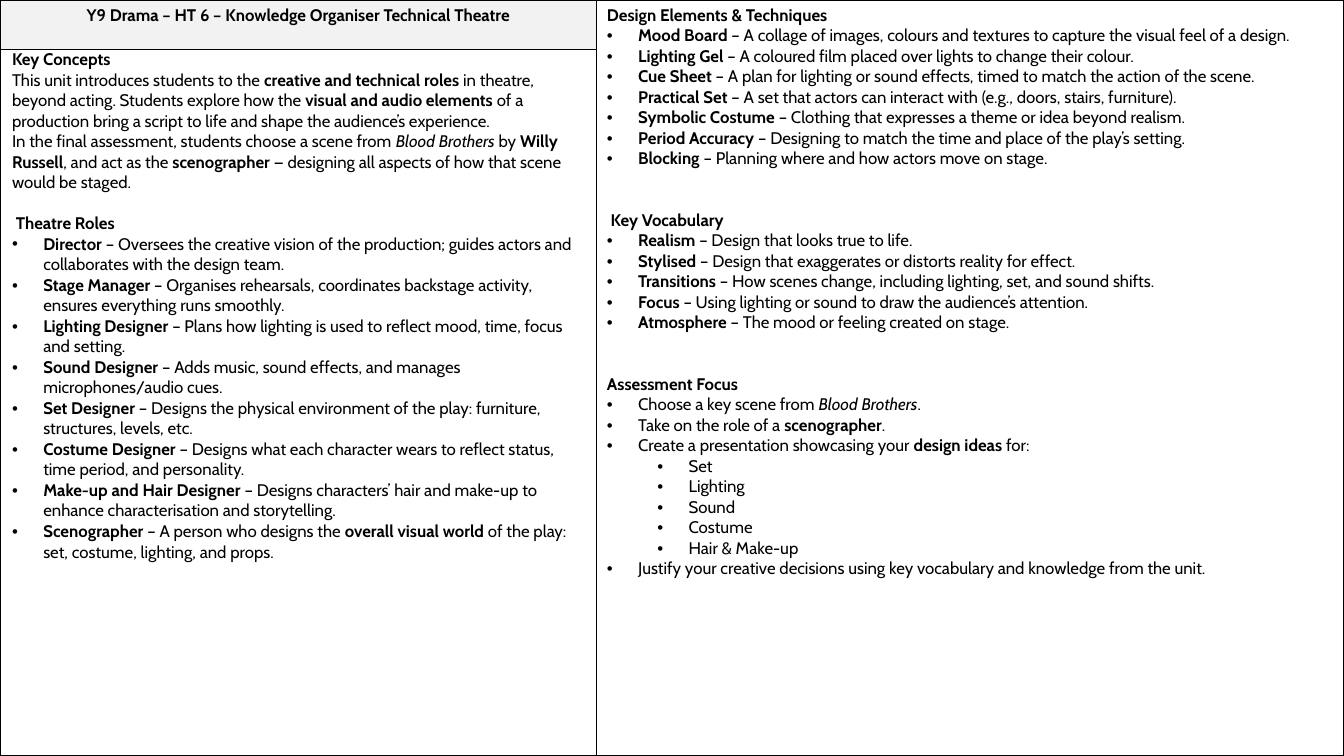
"""Builds a one-slide Year 9 drama knowledge organiser on technical theatre."""
import pptx
import pptx.dml.color
import pptx.enum.text
import pptx.oxml
import pptx.oxml.ns
import pptx.util
from pptx.util import Inches

FONT, SIZE, LINE = "Cabin", 12, 14.6
BLACK, HEADER_GREY = "000000", "F2F2F2"
HANGING = 0.31
COLUMN_WIDTHS = (5.92, 7.41)
ROW_HEIGHTS = (0.49, 7.01)

# *bold* and _italic_ mark the runs; each section is heading, blank lines above, lines.
TITLE = "*Y9 Drama – HT 6 – Knowledge Organiser Technical Theatre*"
CONCEPTS_AND_ROLES = [
    ("Key Concepts", 0, [
        ("plain", "This unit introduces students to the *creative and technical roles* in theatre, beyond acting. Students explore how the *visual and audio elements* of a production bring a script to life and shape the audience’s experience."),
        ("plain", "In the final assessment, students choose a scene from _Blood Brothers_ by *Willy Russell*, and act as the *scenographer* — designing all aspects of how that scene would be staged."),
    ]),
    (" Theatre Roles", 1, [
        ("bullet", "*Director* – Oversees the creative vision of the production; guides actors and collaborates with the design team."),
        ("bullet", "*Stage Manager* – Organises rehearsals, coordinates backstage activity, ensures everything runs smoothly."),
        ("bullet", "*Lighting Designer* – Plans how lighting is used to reflect mood, time, focus and setting."),
        ("bullet", "*Sound Designer* – Adds music, sound effects, and manages microphones/audio cues."),
        ("bullet", "*Set Designer* – Designs the physical environment of the play: furniture, structures, levels, etc."),
        ("bullet", "*Costume Designer* – Designs what each character wears to reflect status, time period, and personality."),
        ("bullet", "*Make-up and Hair Designer* – Designs characters’ hair and make-up to enhance characterisation and storytelling."),
        ("bullet", "*Scenographer* – A person who designs the *overall visual world* of the play: set, costume, lighting, and props."),
    ]),
]
DESIGN_AND_ASSESSMENT = [
    ("Design Elements & Techniques", 0, [
        ("bullet", "*Mood Board* – A collage of images, colours and textures to capture the visual feel of a design."),
        ("bullet", "*Lighting Gel* – A coloured film placed over lights to change their colour."),
        ("bullet", "*Cue Sheet* – A plan for lighting or sound effects, timed to match the action of the scene."),
        ("bullet", "*Practical Set* – A set that actors can interact with (e.g., doors, stairs, furniture)."),
        ("bullet", "*Symbolic Costume* – Clothing that expresses a theme or idea beyond realism."),
        ("bullet", "*Period Accuracy* – Designing to match the time and place of the play’s setting."),
        ("bullet", "*Blocking* – Planning where and how actors move on stage."),
    ]),
    (" Key Vocabulary", 2, [
        ("bullet", "*Realism* – Design that looks true to life."),
        ("bullet", "*Stylised* – Design that exaggerates or distorts reality for effect."),
        ("bullet", "*Transitions* – How scenes change, including lighting, set, and sound shifts."),
        ("bullet", "*Focus* – Using lighting or sound to draw the audience’s attention."),
        ("bullet", "*Atmosphere* – The mood or feeling created on stage."),
    ]),
    ("Assessment Focus", 2, [
        ("bullet", "Choose a key scene from _Blood Brothers_."),
        ("bullet", "Take on the role of a *scenographer*."),
        ("bullet", "Create a presentation showcasing your *design ideas* for:"),
        ("sub-bullet", "Set"),
        ("sub-bullet", "Lighting"),
        ("sub-bullet", "Sound"),
        ("sub-bullet", "Costume"),
        ("sub-bullet", "Hair & Make-up"),
        ("bullet", "Justify your creative decisions using key vocabulary and knowledge from the unit."),
    ]),
]
BULLET_LEVELS = {"bullet": 0, "sub-bullet": 1}


def rgb(colour):
    return pptx.dml.color.RGBColor.from_string(colour)


def element(xml):
    return pptx.oxml.parse_xml(xml.replace(" ", f" {pptx.oxml.ns.nsdecls('a')} ", 1))


def write(paragraph, text, level=None, space_before=0, align=None):
    if level is not None:
        properties = paragraph._p.get_or_add_pPr()
        properties.set("marL", str(Inches(HANGING + 0.5 * level)))
        properties.set("indent", str(-Inches(HANGING)))
        properties.append(element('<a:buFont typeface="Arial"/>'))
        properties.append(element('<a:buChar char="•"/>'))
        paragraph.level = level
    if space_before:
        paragraph.space_before = pptx.util.Pt(space_before)
    paragraph.alignment = align
    for i, part in enumerate(text.split("*")):
        for j, piece in enumerate(part.split("_")):
            if piece:
                run = paragraph.add_run()
                run.text = piece
                run.font.name = FONT
                run.font.size = pptx.util.Pt(SIZE)
                run.font.bold = i % 2 == 1
                run.font.italic = j % 2 == 1
                run.font.color.rgb = rgb(BLACK)


def write_sections(cell, sections):
    frame = cell.text_frame
    for number, (heading, blank_lines, lines) in enumerate(sections):
        paragraph = frame.add_paragraph() if number else frame.paragraphs[0]
        write(paragraph, f"*{heading}*", space_before=blank_lines * LINE)
        for kind, text in lines:
            write(frame.add_paragraph(), text, level=BULLET_LEVELS.get(kind))


def add_borders(cell):
    properties = cell._tc.get_or_add_tcPr()
    for position, side in enumerate("LRTB"):
        properties.insert(position, element(
            f'<a:ln{side} w="12700"><a:solidFill><a:srgbClr val="{BLACK}"/>'
            f"</a:solidFill></a:ln{side}>"))


def main():
    deck = pptx.Presentation()
    deck.slide_width, deck.slide_height = Inches(13.33), Inches(7.5)
    slide = deck.slides.add_slide(deck.slide_layouts[6])
    organiser = slide.shapes.add_table(
        2, 2, 0, 0, deck.slide_width, deck.slide_height).table
    organiser.first_row = organiser.horz_banding = False
    for column, width in zip(organiser.columns, COLUMN_WIDTHS):
        column.width = Inches(width)
    for row, height in zip(organiser.rows, ROW_HEIGHTS):
        row.height = Inches(height)

    header, roles, design = (organiser.cell(*at) for at in ((0, 0), (1, 0), (0, 1)))
    design.merge(organiser.cell(1, 1))
    for cell in organiser.iter_cells():
        cell.fill.background()
        add_borders(cell)
    header.fill.solid()
    header.fill.fore_color.rgb = rgb(HEADER_GREY)
    roles.margin_left = roles.margin_right = Inches(0.12)
    roles.margin_top = roles.margin_bottom = 0

    write(header.text_frame.paragraphs[0], TITLE,
          align=pptx.enum.text.PP_ALIGN.CENTER)
    write_sections(roles, CONCEPTS_AND_ROLES)
    write_sections(design, DESIGN_AND_ASSESSMENT)
    deck.save("out.pptx")


if __name__ == "__main__":
    main()
